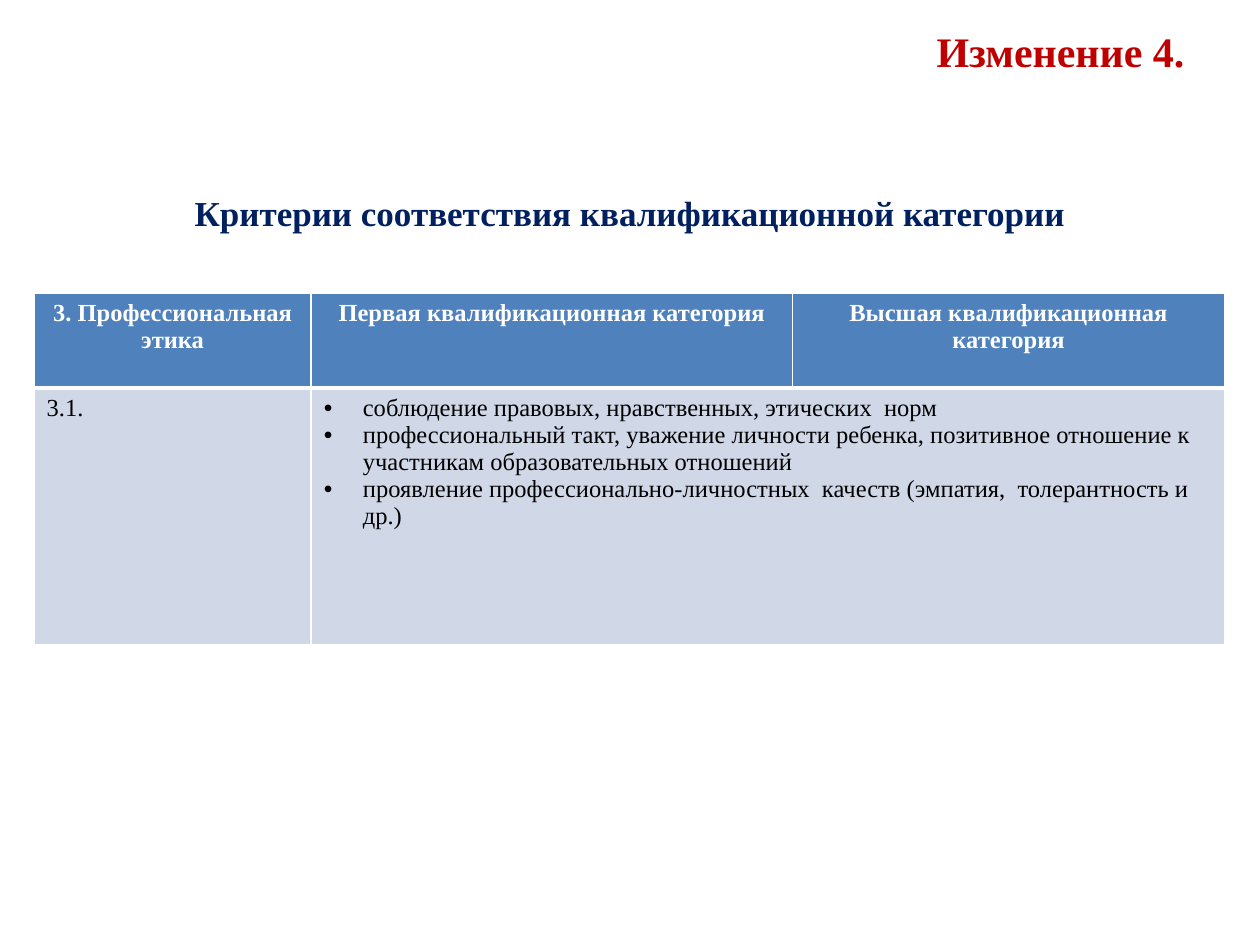
from lxml.etree import SubElement
from pptx import Presentation
from pptx.dml.color import RGBColor
from pptx.enum.text import MSO_ANCHOR as Anchor, PP_ALIGN as Align
from pptx.oxml.ns import qn
from pptx.util import Inches, Pt

RED = RGBColor(0xC0, 0x00, 0x00)
NAVY = RGBColor(0x00, 0x20, 0x60)
BLUE = RGBColor(0x4F, 0x81, 0xBD)
PALE_BLUE = RGBColor(0xD0, 0xD8, 0xE8)
WHITE = RGBColor(0xFF, 0xFF, 0xFF)
BLACK = RGBColor(0x00, 0x00, 0x00)


def write_text(frame, *lines, size=14, color=BLACK, bold=False,
               align=Align.LEFT, anchor=Anchor.TOP, bullet=False):
    """Write each line as one paragraph of the text frame."""
    frame.word_wrap = True
    frame.vertical_anchor = anchor
    for index, line in enumerate(lines):
        paragraph = frame.paragraphs[0] if index == 0 else frame.add_paragraph()
        paragraph.alignment = align
        run = paragraph.add_run()
        run.text = line
        run.font.name = "Times New Roman"
        run.font.size = Pt(size)
        run.font.bold = bold
        run.font.color.rgb = color
        if bullet:
            properties = paragraph._p.get_or_add_pPr()
            properties.set("marL", str(Inches(0.31)))
            properties.set("indent", str(-Inches(0.31)))
            SubElement(properties, qn("a:buFont"), typeface="Arial")
            SubElement(properties, qn("a:buChar"), char="•")


def format_cell(cell, fill, bottom_width=1, top_width=1):
    """Give the cell a solid fill and white borders, widths in points."""
    properties = cell._tc.get_or_add_tcPr()
    for side, width in zip("LRTB", (1, 1, top_width, bottom_width)):
        line = SubElement(properties, qn(f"a:ln{side}"), w=str(Pt(width)))
        line_fill = SubElement(line, qn("a:solidFill"))
        SubElement(line_fill, qn("a:srgbClr"), val=str(WHITE))
    cell.fill.solid()
    cell.fill.fore_color.rgb = fill


presentation = Presentation()
presentation.slide_width = Inches(10)
presentation.slide_height = Inches(7.5)
slide = presentation.slides.add_slide(presentation.slide_layouts[6])

title = slide.shapes.add_textbox(Inches(0.5), Inches(0.13), Inches(9), Inches(0.55))
write_text(title.text_frame, "Изменение 4.", size=24, color=RED, bold=True,
           align=Align.RIGHT, anchor=Anchor.MIDDLE)

subtitle = slide.shapes.add_textbox(Inches(0.5), Inches(1.44), Inches(9), Inches(0.5))
write_text(subtitle.text_frame, "Критерии соответствия квалификационной категории",
           size=20, color=NAVY, bold=True, align=Align.CENTER, anchor=Anchor.MIDDLE)

table = slide.shapes.add_table(2, 3, Inches(0.27), Inches(2.33),
                               Inches(9.45), Inches(2.79)).table
for column, width in zip(table.columns, (2.2, 3.82, 3.43)):
    column.width = Inches(width)
for row, height in zip(table.rows, (0.75, 2.04)):
    row.height = Inches(height)

headers = ("3. Профессиональная этика", "Первая квалификационная категория",
           "Высшая квалификационная категория")
for column, header in enumerate(headers):
    header_cell, body_cell = table.cell(0, column), table.cell(1, column)
    format_cell(header_cell, BLUE, bottom_width=3)
    format_cell(body_cell, PALE_BLUE, top_width=3)
    write_text(header_cell.text_frame, header, color=WHITE, bold=True, align=Align.CENTER)

criteria_cell = table.cell(1, 1)
criteria_cell.merge(table.cell(1, 2))
write_text(table.cell(1, 0).text_frame, "3.1.")
write_text(
    criteria_cell.text_frame,
    "соблюдение правовых, нравственных, этических  норм",
    "профессиональный такт, уважение личности ребенка, позитивное отношение к "
    "участникам образовательных отношений",
    "проявление профессионально-личностных  качеств (эмпатия,  толерантность и др.)",
    bullet=True,
)

presentation.save("out.pptx")
